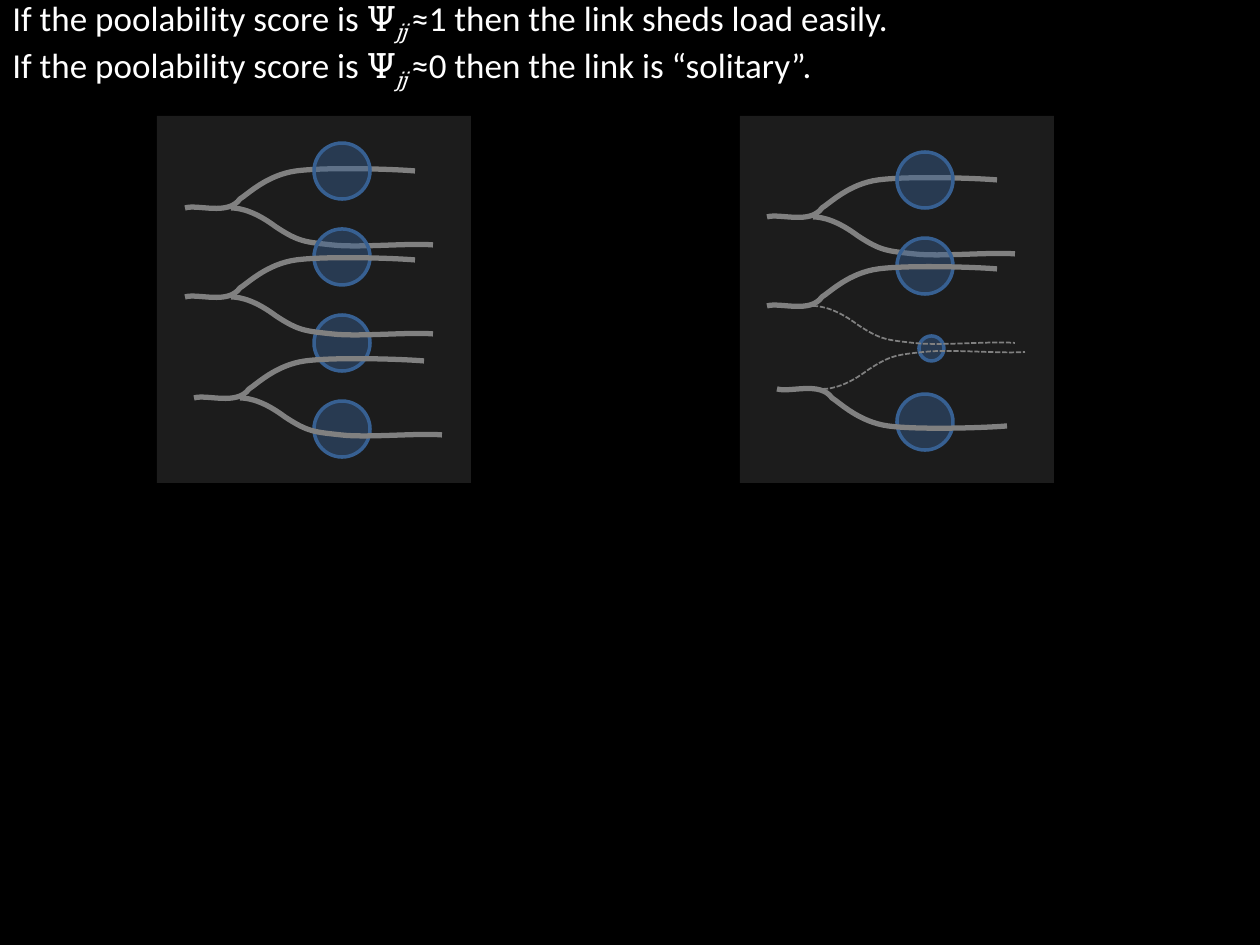
from dataclasses import dataclass

from lxml.etree import SubElement
from pptx import Presentation
from pptx.dml.color import RGBColor
from pptx.enum.dml import MSO_LINE_DASH_STYLE as Dash
from pptx.enum.shapes import MSO_SHAPE as Shape
from pptx.enum.text import MSO_ANCHOR as Anchor
from pptx.oxml.ns import qn
from pptx.util import Pt

PX = 914400 / 126
BLACK, WHITE, PANEL, GREY, BLUE = "000000", "FFFFFF", "1C1C1C", "808080", "376092"

# Cubic curves as control points relative to the start of the fork
STEM = [(0, 0), (13, -4), (43, 8), (55, -9), (63, -14), (82, -33), (111, -37),
        (140, -41), (207, -39), (230, -37)]
BRANCH = [(46, 0), (56, 0), (71, 4), (91, 19), (114, 34), (120, 34), (147, 37),
          (173, 40), (224, 35), (248, 37)]


@dataclass
class Fork:
    x: int
    y: int
    dashed: bool = False  # the branch is cut off
    flip: int = 1  # -1 mirrors the fork top to bottom


@dataclass
class Circle:
    x: int
    y: int
    size: int = 56


@dataclass
class Panel:
    x: int
    circles: list[Circle]
    forks: list[Fork]


PANELS = [
    Panel(740,
          [Circle(897, 152), Circle(897, 238), Circle(919, 336, 25), Circle(897, 394)],
          [Fork(767, 217), Fork(767, 306, dashed=True),
           Fork(777, 389, dashed=True, flip=-1)]),
    Panel(157,
          [Circle(314, 143 + 86 * i) for i in range(4)],
          [Fork(185, 208), Fork(185, 297), Fork(194, 398)]),
]


def emu(px: int) -> int:
    return round(px * PX)


def rgb(color: str) -> RGBColor:
    return RGBColor.from_string(color)


def add_preset(s, kind, x: int, y: int, w: int, h: int, color: str):
    sp = s.shapes.add_shape(kind, emu(x), emu(y), emu(w), emu(h))
    sp.shadow.inherit = False
    sp.fill.solid()
    sp.fill.fore_color.rgb = rgb(color)
    sp.line.fill.background()
    return sp


def add_circle(s, c: Circle) -> None:
    sp = add_preset(s, Shape.OVAL, c.x, c.y, c.size, c.size, BLUE)
    fill = sp._element.spPr.find(qn("a:solidFill"))
    SubElement(fill[0], qn("a:alpha"), val="45000")
    sp.line.color.rgb = rgb(BLUE)
    sp.line.width = Pt(2)


def add_curve(s, points: list[tuple[int, int]], dashed: bool) -> None:
    builder = s.shapes.build_freeform(*points[0], scale=PX)
    builder.add_line_segments(points[1:], close=False)
    sp = builder.convert_to_shape()
    sp.shadow.inherit = False
    sp.fill.background()
    sp.line.color.rgb = rgb(GREY)
    sp.line.width = Pt(1 if dashed else 3)
    if dashed:
        sp.line.dash_style = Dash.SQUARE_DOT
    # Join every three segment ends into one cubic curve
    path = next(sp._element.iter(qn("a:path")))
    segments = path.findall(qn("a:lnTo"))
    for i in range(0, len(segments), 3):
        curve = SubElement(path, qn("a:cubicBezTo"))
        for segment in segments[i:i + 3]:
            curve.append(segment[0])
            path.remove(segment)


def add_fork(s, f: Fork) -> None:
    for shape, dashed in ((STEM, False), (BRANCH, f.dashed)):
        add_curve(s, [(f.x + dx, f.y + f.flip * dy) for dx, dy in shape], dashed)


def add_run(p, text: str, font: str, subscript: bool = False) -> None:
    r = p.add_run()
    r.text = text
    r.font.size = Pt(20)
    r.font.name = font
    r.font.color.rgb = rgb(WHITE)
    if subscript:
        r.font.italic = True
        r.font._element.set("baseline", "-25000")


def add_title(s, endings: list[str]) -> None:
    tf = s.shapes.add_textbox(0, 0, emu(1260), emu(88)).text_frame
    tf.word_wrap = True
    tf.vertical_anchor = Anchor.MIDDLE
    p = tf.paragraphs[0]
    for i, ending in enumerate(endings):
        if i:
            p.add_line_break()
        add_run(p, "If the poolability score is ", "Calibri")
        add_run(p, "Ψ", "Roboto Slab")
        add_run(p, "jj ", "Roboto Slab", subscript=True)
        add_run(p, ending, "Calibri")


def main() -> None:
    prs = Presentation()
    prs.slide_width, prs.slide_height = emu(1260), emu(945)
    s = prs.slides.add_slide(prs.slide_layouts[6])
    s.background.fill.solid()
    s.background.fill.fore_color.rgb = rgb(BLACK)

    # Panels: the circles lie over the first fork and under the others
    for panel in PANELS:
        add_preset(s, Shape.RECTANGLE, panel.x, 116, 314, 367, PANEL)
        add_fork(s, panel.forks[0])
        for circle in panel.circles:
            add_circle(s, circle)
        for fork in panel.forks[1:]:
            add_fork(s, fork)

    # Title
    add_title(s, ["≈1 then the link sheds load easily.",
                  "≈0 then the link is “solitary”."])
    prs.save("out.pptx")


if __name__ == "__main__":
    main()
